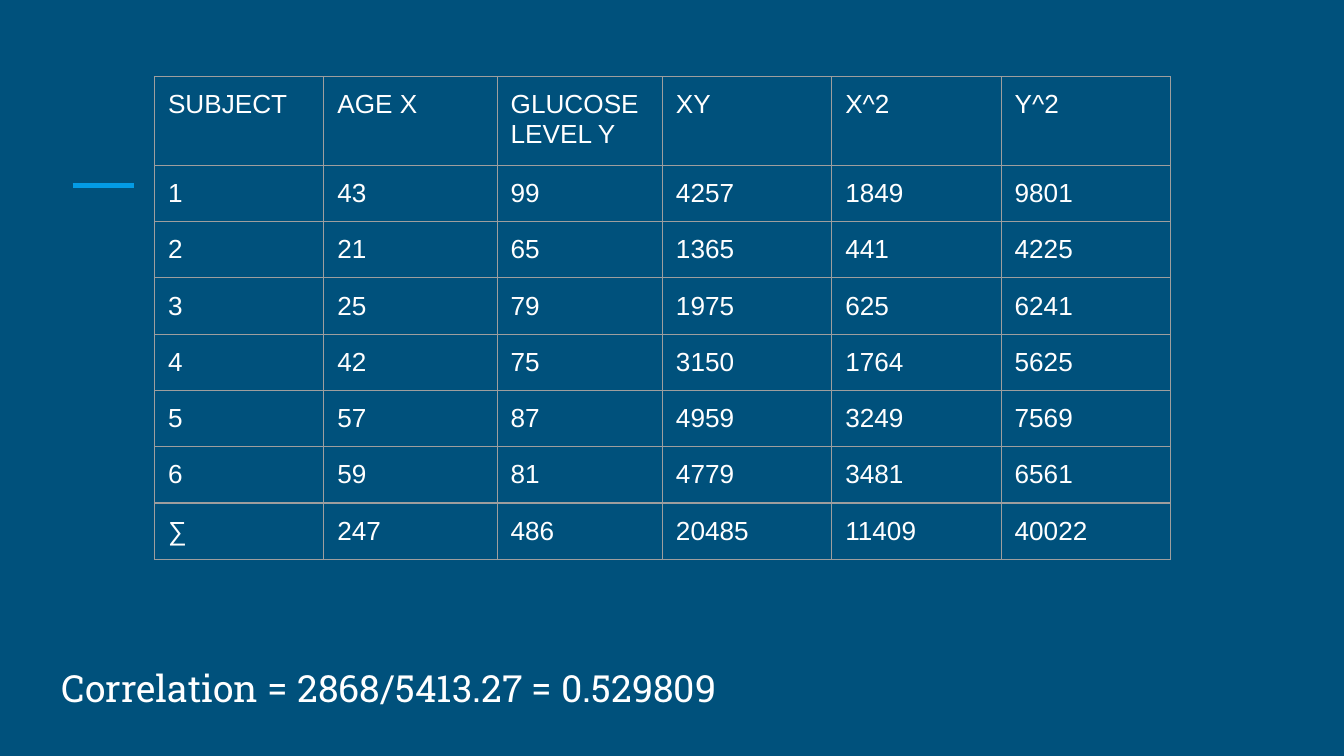
from dataclasses import dataclass

from lxml.etree import SubElement as Sub
from pptx import Presentation
from pptx.dml.color import RGBColor as RGB
from pptx.enum.shapes import MSO_CONNECTOR as Conn
from pptx.enum.text import MSO_ANCHOR as Anchor, MSO_AUTO_SIZE as Fit, PP_ALIGN as Align
from pptx.oxml.ns import qn
from pptx.util import Inches, Pt

COLORS = {"back": "00517C", "accent": "039BE5", "grid": "9E9E9E", "text": "FFFFFF"}
HEADS = ["SUBJECT", "AGE X", "GLUCOSE LEVEL Y", "XY", "X^2", "Y^2"]
WIDTHS = [1.26, 1.29, 1.23, 1.26, 1.26, 1.26]
HEAD_H, ROW_H = 0.66, 0.34
PAD = Inches(0.1)


@dataclass
class Subject:
    age: int
    level: int

    def values(self) -> list[int]:
        x, y = self.age, self.level
        return [x, y, x * y, x * x, y * y]


SUBJECTS = [Subject(43, 99), Subject(21, 65), Subject(25, 79),
            Subject(42, 75), Subject(57, 87), Subject(59, 81)]


def style(frame, size: int, face: str) -> None:
    for para in frame.paragraphs:
        para.alignment = Align.LEFT
        for run in para.runs:
            run.font.size = Pt(size)
            run.font.name = face
            run.font.color.rgb = RGB.from_string(COLORS["text"])


def pad(box) -> None:
    box.margin_left = box.margin_right = PAD
    box.margin_top = box.margin_bottom = PAD


def border(cell) -> None:
    props = cell._tc.get_or_add_tcPr()
    for at, side in enumerate(("lnL", "lnR", "lnT", "lnB")):
        line = props.makeelement(qn(f"a:{side}"), {"w": str(Pt(0.75))})
        fill = Sub(line, qn("a:solidFill"))
        Sub(fill, qn("a:srgbClr"), val=COLORS["grid"])
        props.insert(at, line)  # borders come before the fill


def draw_cell(cell, text: str) -> None:
    cell.text_frame.text = text
    style(cell.text_frame, 14, "Arial")
    pad(cell)
    cell.vertical_anchor = Anchor.TOP
    cell.fill.background()
    border(cell)


def draw_table(slide, rows: list[list[str]]) -> None:
    frame = slide.shapes.add_table(len(rows), len(HEADS), Inches(1.15), Inches(0.57),
                                   Inches(7.57), Inches(3.7))
    table = frame.table
    table.first_row = table.horz_banding = False
    for col, width in zip(table.columns, WIDTHS):
        col.width = Inches(width)
    for i, row in enumerate(rows):
        table.rows[i].height = Inches(ROW_H if i else HEAD_H)
        for j, text in enumerate(row):
            draw_cell(table.cell(i, j), text)
    frame.height = Inches(3.7)


def draw_accent(slide) -> None:
    line = slide.shapes.add_connector(Conn.STRAIGHT, Inches(0.54), Inches(1.38),
                                      Inches(1), Inches(1.38))
    line.line.color.rgb = RGB.from_string(COLORS["accent"])
    line.line.width = Pt(3)
    Sub(line._element.spPr, qn("a:effectLst"))


def draw_title(slide, text: str) -> None:
    title = slide.shapes.title
    title.left, title.top = Inches(0.36), Inches(4.63)
    title.width, title.height = Inches(9.15), Inches(0.75)
    frame = title.text_frame
    frame.text = text
    frame.word_wrap = True
    frame.auto_size = Fit.NONE
    frame.vertical_anchor = Anchor.BOTTOM
    pad(frame)
    style(frame, 20, "Roboto Slab")


def main() -> None:
    # Widescreen page, 16 to 9
    deck = Presentation()
    deck.slide_width = Inches(10)
    deck.slide_height = Inches(10) * 9 // 16
    slide = deck.slides.add_slide(deck.slide_layouts[5])
    slide.background.fill.solid()
    slide.background.fill.fore_color.rgb = RGB.from_string(COLORS["back"])

    # Subject rows, then the column sums
    data = [item.values() for item in SUBJECTS]
    sums = [sum(col) for col in zip(*data)]
    names = [str(n) for n in range(1, len(data) + 1)] + ["∑"]
    rows = [[name, *map(str, row)] for name, row in zip(names, data + [sums])]

    draw_accent(slide)
    draw_title(slide, "Correlation = 2868/5413.27 = 0.529809")
    draw_table(slide, [HEADS] + rows)
    deck.save("out.pptx")


if __name__ == "__main__":
    main()
